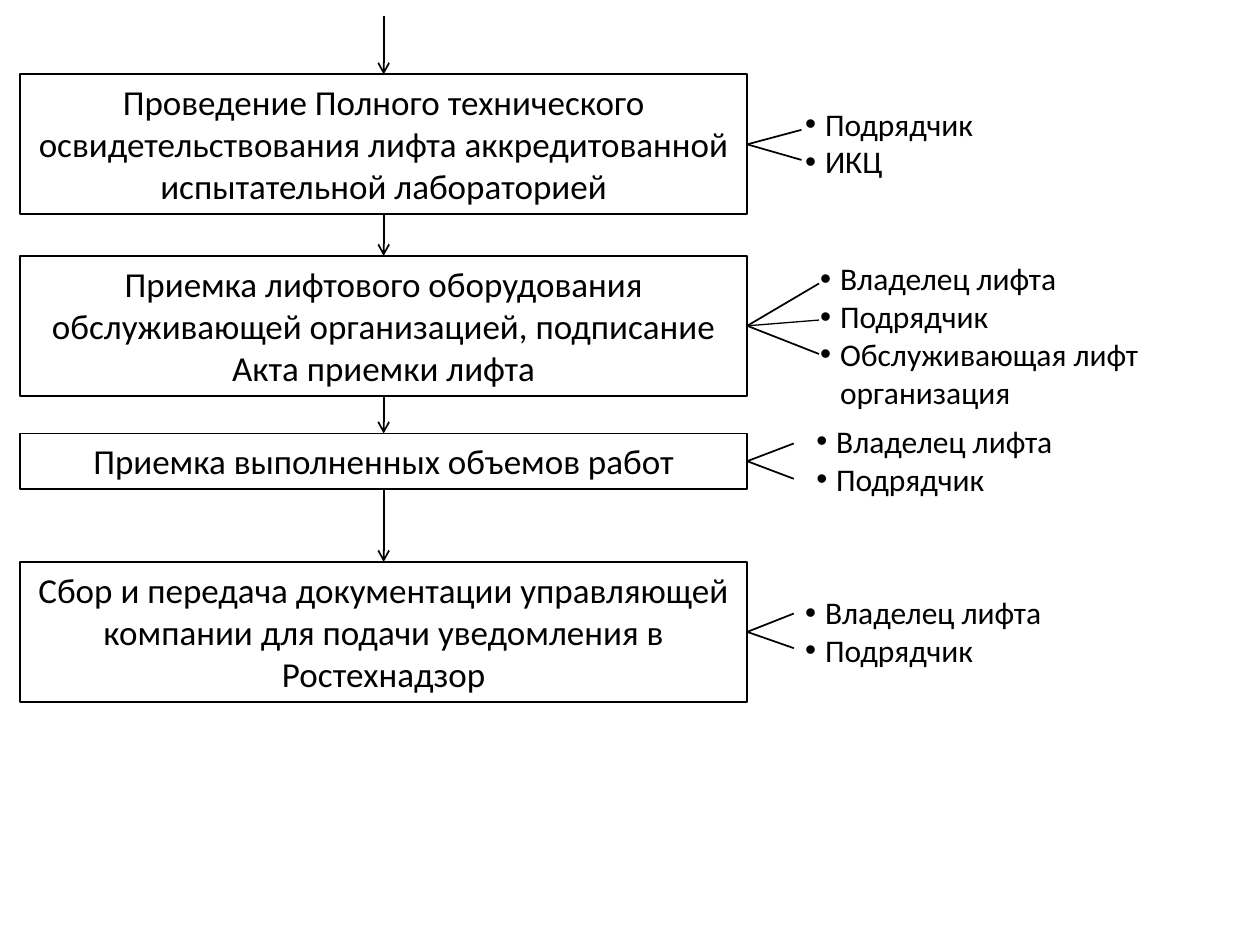
from dataclasses import dataclass

from lxml.etree import SubElement
from pptx import Presentation
from pptx.dml.color import RGBColor
from pptx.enum.shapes import MSO_CONNECTOR, MSO_SHAPE
from pptx.enum.text import MSO_ANCHOR, MSO_AUTO_SIZE, PP_ALIGN
from pptx.oxml.ns import qn
from pptx.shapes.connector import Connector
from pptx.slide import Slide
from pptx.text.text import TextFrame, _Paragraph
from pptx.util import Pt


@dataclass(frozen=True)
class Theme:
    font: str = "Calibri"
    ink: RGBColor = RGBColor(0, 0, 0)
    step: float = 20
    role: float = 18
    line: float = 1
    thin: float = 0.75


@dataclass(frozen=True)
class Roles:
    """Bulleted list of those in charge, with the line ends that point to it."""
    left: float
    top: float
    width: float
    height: float
    names: tuple[str, ...]
    tip: float
    ends: tuple[float, ...]


@dataclass(frozen=True)
class Step:
    text: str
    top: float
    height: float
    roles: Roles

    @property
    def mid(self) -> float:
        return self.top + self.height / 2

    @property
    def base(self) -> float:
        return self.top + self.height


THEME = Theme()
LEFT, WIDTH = 11.5, 415.5
RIGHT, AXIS = LEFT + WIDTH, LEFT + WIDTH / 2
START = 9.4
INDENT, HANG = 15.75, 11.35
OWNER, BUILDER = "Владелец лифта", "Подрядчик"

STEPS = (
    Step("Проведение Полного технического освидетельствования лифта "
         "аккредитованной испытательной лабораторией", 42.5, 80,
         Roles(448.6, 56.2, 249, 51, (BUILDER, "ИКЦ"), 458, (74.2, 91.4))),
    Step("Приемка лифтового оборудования обслуживающей организацией, "
         "подписание Акта приемки лифта", 146.2, 80,
         Roles(457.2, 144.7, 217.4, 94.3,
               (OWNER, BUILDER, "Обслуживающая лифт организация"),
               468, (162, 182.9, 202.3))),
    Step("Приемка выполненных объемов работ", 247.7, 31.7,
         Roles(455, 237.6, 249, 51, (OWNER, BUILDER), 453.6, (253.4, 273.6))),
    Step("Сбор и передача документации управляющей компании для подачи "
         "уведомления в Ростехнадзор", 321.1, 80,
         Roles(448.6, 335.5, 249, 51, (OWNER, BUILDER), 453.6, (350.6, 370.4))),
)


def add_run(para: _Paragraph, text: str, size: float) -> None:
    run = para.add_run()
    run.text = text
    run.font.name = THEME.font
    run.font.size = Pt(size)
    run.font.color.rgb = THEME.ink


def set_frame(frame: TextFrame, anchor: MSO_ANCHOR) -> None:
    frame.word_wrap = True
    frame.auto_size = MSO_AUTO_SIZE.SHAPE_TO_FIT_TEXT
    frame.vertical_anchor = anchor


def add_bullet(para: _Paragraph) -> None:
    props = para._p.get_or_add_pPr()
    props.set("marL", str(Pt(INDENT)))
    props.set("indent", str(-Pt(HANG)))
    SubElement(props, qn("a:buFont")).set("typeface", "Arial")
    SubElement(props, qn("a:buChar")).set("char", "•")


def add_line(slide: Slide, x1: float, y1: float, x2: float, y2: float,
             width: float = THEME.line) -> Connector:
    line = slide.shapes.add_connector(
        MSO_CONNECTOR.STRAIGHT, Pt(x1), Pt(y1), Pt(x2), Pt(y2))
    line.line.color.rgb = THEME.ink
    line.line.width = Pt(width)
    SubElement(line._element.spPr, qn("a:effectLst"))
    return line


def add_arrow(slide: Slide, top: float, base: float) -> None:
    line = add_line(slide, AXIS, top, AXIS, base)
    SubElement(line.line._get_or_add_ln(), qn("a:tailEnd")).set("type", "arrow")


def add_step(slide: Slide, step: Step) -> None:
    box = slide.shapes.add_shape(
        MSO_SHAPE.RECTANGLE, Pt(LEFT), Pt(step.top), Pt(WIDTH), Pt(step.height))
    box.shadow.inherit = False
    box.fill.background()
    box.line.color.rgb = THEME.ink
    box.line.width = Pt(THEME.line)
    set_frame(box.text_frame, MSO_ANCHOR.TOP)
    para = box.text_frame.paragraphs[0]
    para.alignment = PP_ALIGN.CENTER
    add_run(para, step.text, THEME.step)


def add_roles(slide: Slide, roles: Roles) -> None:
    box = slide.shapes.add_textbox(
        Pt(roles.left), Pt(roles.top), Pt(roles.width), Pt(roles.height))
    frame = box.text_frame
    set_frame(frame, MSO_ANCHOR.TOP)
    for i, name in enumerate(roles.names):
        para = frame.add_paragraph() if i else frame.paragraphs[0]
        add_bullet(para)
        add_run(para, name, THEME.role)


def add_fan(slide: Slide, step: Step) -> None:
    """Join a step to its roles; a line between the outer two is thinner."""
    ends = step.roles.ends
    for end in ends:
        outer = end in (ends[0], ends[-1])
        add_line(slide, RIGHT, step.mid, step.roles.tip, end,
                 THEME.line if outer else THEME.thin)


def main() -> None:
    deck = Presentation()
    deck.slide_width, deck.slide_height = Pt(720), Pt(540)
    slide = deck.slides.add_slide(deck.slide_layouts[6])
    above = START
    for step in STEPS:
        add_arrow(slide, above, step.top)
        add_step(slide, step)
        add_roles(slide, step.roles)
        add_fan(slide, step)
        above = step.base
    deck.save("out.pptx")


if __name__ == "__main__":
    main()
